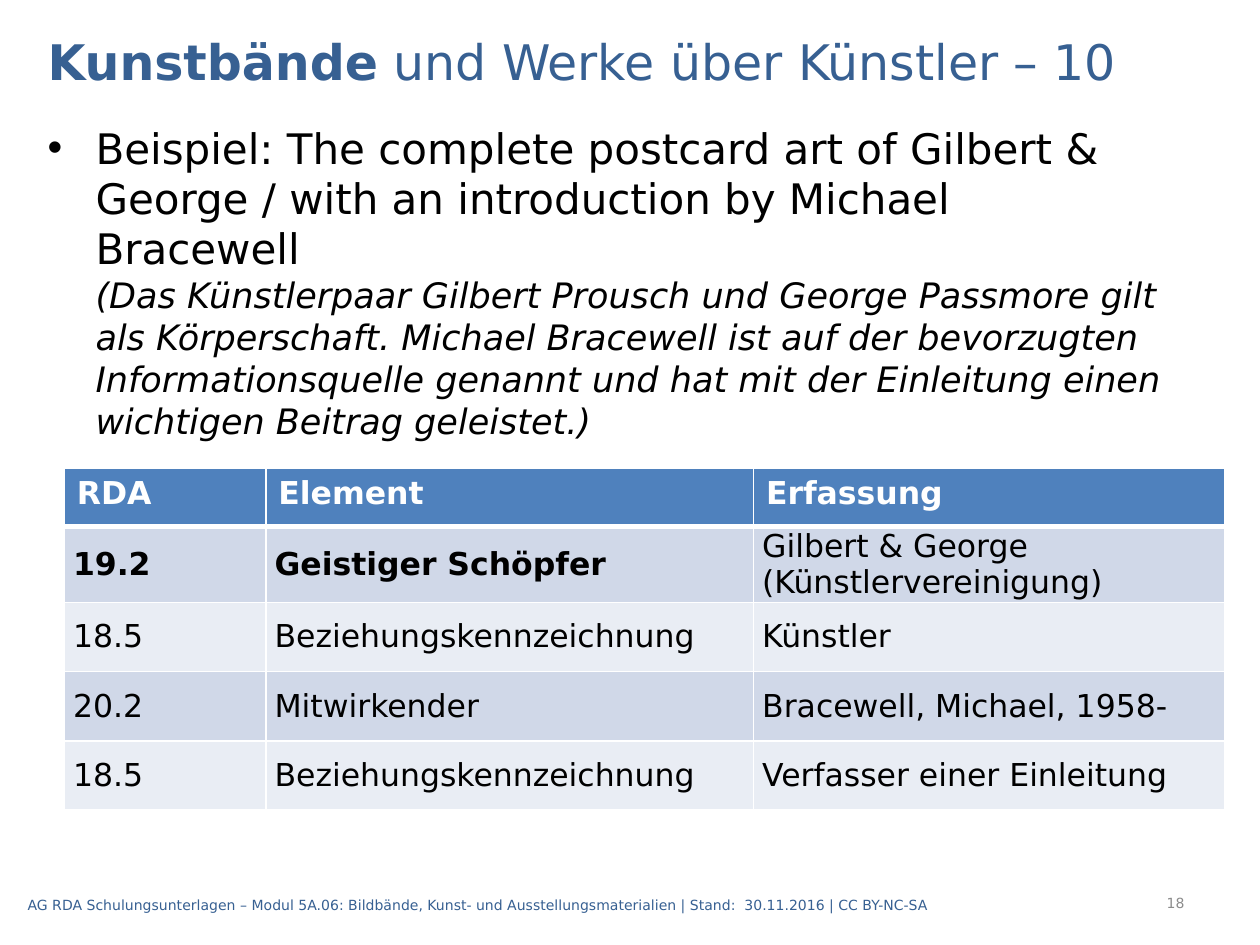
from lxml.etree import SubElement
from pptx import Presentation
from pptx.dml.color import RGBColor
from pptx.enum.text import MSO_ANCHOR, PP_ALIGN
from pptx.oxml.ns import qn
from pptx.util import Inches, Pt

FONT = "DejaVu Sans"
BLACK = RGBColor(0x00, 0x00, 0x00)
WHITE = RGBColor(0xFF, 0xFF, 0xFF)
NAVY = RGBColor(0x37, 0x60, 0x92)
GRAY = RGBColor(0x8C, 0x8C, 0x8C)
HEADER_BLUE = RGBColor(0x4F, 0x81, 0xBD)
BANDS = [RGBColor(0xD0, 0xD8, 0xE8), RGBColor(0xE9, 0xED, 0xF4)]

COLUMN_WIDTHS = [1.6, 3.87, 3.74]
ROW_HEIGHTS = [0.46, 0.57, 0.55, 0.55, 0.55]
TABLE_ROWS = [
    ["RDA", "Element", "Erfassung"],
    ["19.2", "Geistiger Schöpfer", "Gilbert & George (Künstlervereinigung)"],
    ["18.5", "Beziehungskennzeichnung", "Künstler"],
    ["20.2", "Mitwirkender", "Bracewell, Michael, 1958-"],
    ["18.5", "Beziehungskennzeichnung", "Verfasser einer Einleitung"],
]


def add_text(paragraph, text, size=18, color=BLACK, bold=False, italic=False):
    """Append formatted text; each newline becomes a line break."""
    for index, line in enumerate(text.split("\n")):
        if index:
            paragraph.add_line_break()
        if line:
            run = paragraph.add_run()
            run.text = line
            run.font.name = FONT
            run.font.size = Pt(size)
            run.font.color.rgb = color
            run.font.bold = bold
            run.font.italic = italic


def add_text_box(slide, box, anchor=MSO_ANCHOR.MIDDLE):
    """Add a wrapping text box and return its first paragraph."""
    frame = slide.shapes.add_textbox(*map(Inches, box)).text_frame
    frame.word_wrap = True
    frame.vertical_anchor = anchor
    return frame.paragraphs[0]


def set_bullet(paragraph, indent):
    properties = paragraph._p.get_or_add_pPr()
    properties.set("marL", str(Inches(indent)))
    properties.set("indent", str(-Inches(indent)))
    SubElement(properties, qn("a:buFont"), typeface="Arial")
    SubElement(properties, qn("a:buChar"), char="•")


def set_borders(cell, bottom=1, top=1):
    """Draw white cell borders; they must precede the fill."""
    properties = cell._tc.get_or_add_tcPr()
    widths = {"a:lnL": 1, "a:lnR": 1, "a:lnT": top, "a:lnB": bottom}
    for tag, width in widths.items():
        line = SubElement(properties, qn(tag), w=str(Pt(width)))
        fill = SubElement(line, qn("a:solidFill"))
        SubElement(fill, qn("a:srgbClr"), val=str(WHITE))


def add_title(slide, box):
    paragraph = add_text_box(slide, box)
    add_text(paragraph, "Kunstbände", size=28, color=NAVY, bold=True)
    add_text(paragraph, " und Werke über Künstler – 10", size=28, color=NAVY)


def add_body(slide, box):
    paragraph = add_text_box(slide, box, anchor=MSO_ANCHOR.TOP)
    set_bullet(paragraph, 0.38)
    add_text(paragraph, "Beispiel: The complete postcard art of Gilbert & George / "
             "with an introduction by Michael\nBracewell\n", size=24)
    add_text(paragraph, "(Das Künstlerpaar Gilbert Prousch und George Passmore gilt "
             "als Körperschaft. Michael Bracewell ist auf der bevorzugten "
             "Informationsquelle genannt und hat mit der Einleitung einen "
             "wichtigen Beitrag geleistet.)", size=20, italic=True)


def add_element_table(slide, box):
    table = slide.shapes.add_table(
        len(ROW_HEIGHTS), len(COLUMN_WIDTHS), *map(Inches, box)).table
    for column, width in zip(table.columns, COLUMN_WIDTHS):
        column.width = Inches(width)
    for row_index, (height, texts) in enumerate(zip(ROW_HEIGHTS, TABLE_ROWS)):
        table.rows[row_index].height = Inches(height)
        is_header = row_index == 0
        for column_index, text in enumerate(texts):
            cell = table.cell(row_index, column_index)
            set_borders(cell, bottom=3 if is_header else 1,
                        top=3 if row_index == 1 else 1)
            cell.fill.solid()
            paragraph = cell.text_frame.paragraphs[0]
            if is_header:
                cell.fill.fore_color.rgb = HEADER_BLUE
                add_text(paragraph, text, color=WHITE, bold=True)
                continue
            cell.fill.fore_color.rgb = BANDS[(row_index - 1) % 2]
            cell.vertical_anchor = MSO_ANCHOR.MIDDLE
            cell.margin_left = cell.margin_right = Inches(0.07)
            cell.margin_top = cell.margin_bottom = 0
            paragraph.space_after = Pt(6)
            # The creator's number and element name are emphasised
            add_text(paragraph, text, bold=row_index == 1 and column_index < 2)


def add_footer(slide, box):
    add_text(add_text_box(slide, box),
             "AG RDA Schulungsunterlagen – Modul 5A.06: Bildbände, Kunst- und "
             "Ausstellungsmaterialien | Stand:  30.11.2016 | CC BY-NC-SA",
             size=8, color=NAVY)


def add_slide_number(slide, box):
    paragraph = add_text_box(slide, box)
    paragraph.alignment = PP_ALIGN.RIGHT
    add_text(paragraph, "18", size=8, color=GRAY)


def main():
    presentation = Presentation()
    presentation.slide_width = Inches(10)
    presentation.slide_height = Inches(7.5)
    slide = presentation.slides.add_slide(presentation.slide_layouts[6])
    add_body(slide, (0.28, 0.92, 9.45, 5.98))
    add_slide_number(slide, (7.91, 6.97, 1.59, 0.4))
    add_footer(slide, (0.12, 6.98, 9.21, 0.4))
    add_element_table(slide, (0.51, 3.72, sum(COLUMN_WIDTHS), sum(ROW_HEIGHTS)))
    add_title(slide, (0.28, 0.2, 9.45, 0.56))
    presentation.save("out.pptx")


if __name__ == "__main__":
    main()
